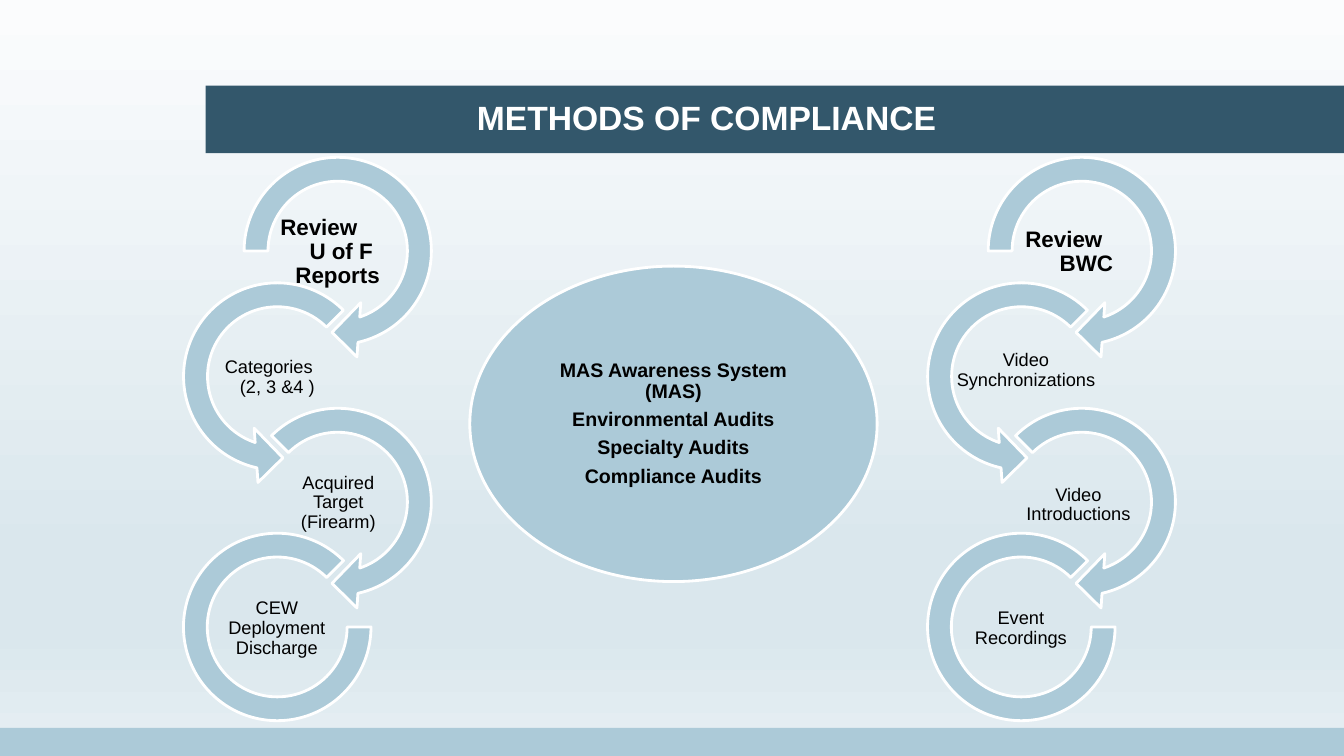
from dataclasses import dataclass

from lxml import etree
from pptx import Presentation
from pptx.dml.color import RGBColor
from pptx.enum import shapes, text
from pptx.oxml import ns
from pptx.util import Inches, Pt

MIST = "ACCAD8"
WHITE = "FFFFFF"
BLACK = "000000"
STEP = 1.245
ARROW_SIZE = 2.16
GEOMETRY = shapes.MSO_SHAPE


@dataclass
class Label:
    """Text of one step, with optional line indents and a nudged place."""
    lines: list
    indents: tuple = ()
    size: int = 13
    bold: bool = False
    dx: float = 0
    dy: float = 0
    width: float = 1.21


@dataclass
class Arc:
    """Outline of one step, placed relative to its column."""
    geometry: int
    dx: float
    top: float
    size: float
    label_dx: float
    adjustments: tuple


def turn_arrow(geometry, dx, row, label_dx, end, start):
    """Describe one curved arrow of the chain."""
    return Arc(geometry, dx, 1.41 + STEP * row, ARROW_SIZE, label_dx,
               (0.11, 11.423, end, start, 0.125))


ARCS = [
    turn_arrow(GEOMETRY.CIRCULAR_ARROW, 0.6, 0, 1.08, 45, 108),
    turn_arrow(GEOMETRY.LEFT_CIRCULAR_ARROW, 0, 1, 0.47, 63, 189),
    turn_arrow(GEOMETRY.CIRCULAR_ARROW, 0.6, 2, 1.08, 45, 135),
    Arc(GEOMETRY.BLOCK_ARC, 0.15, 5.29, 1.86, 0.47, (0, 189, 0.127)),
]
REPORT_STEPS = [
    Label(["Review", "U of F", "Reports"], (0.02, 0.31, 0.17), 16, True),
    Label(["Categories", "(2, 3 &4 )"], (0.08, 0.23)),
    Label(["Acquired Target (Firearm)"]),
    Label(["CEW Deployment Discharge"]),
]
VIDEO_STEPS = [
    Label(["Review", "BWC"], (0.03, 0.37), 16, True),
    Label(["Video Synchronizations"], dx=-0.17, dy=-0.07, width=1.65),
    Label(["Video Introductions"], dx=-0.04, dy=0.02),
    Label(["Event Recordings"]),
]
AUDITS = ["MAS Awareness System (MAS)", "Environmental Audits",
          "Specialty Audits", "Compliance Audits"]


def color(code):
    """Turn a hex string into a colour."""
    return RGBColor.from_string(code)


def paint_background(slide, stops):
    """Fill the slide with a top-to-bottom gradient."""
    fill = slide.background.fill
    fill.gradient()
    fill.gradient_angle = 270
    stop_list = next(slide.element.iter(ns.qn("a:gsLst")))
    for stop in list(stop_list):
        stop_list.remove(stop)
    for percent, code in stops:
        stop = etree.SubElement(stop_list, ns.qn("a:gs"), pos=str(percent * 1000))
        etree.SubElement(stop, ns.qn("a:srgbClr"), val=code)


def add_figure(parent, geometry, box, fill, outline=None, adjustments=()):
    """Add a flat preset shape."""
    figure = parent.add_shape(geometry, *map(Inches, box))
    figure.shadow.inherit = False
    figure.fill.solid()
    figure.fill.fore_color.rgb = color(fill)
    if outline:
        figure.line.color.rgb = color(outline)
        figure.line.width = Pt(2)
    else:
        figure.line.fill.background()
    for index, value in enumerate(adjustments):
        figure.adjustments[index] = value


def add_text(parent, box, lines, size, bold=False, code=BLACK, inset=0.01,
             align=text.PP_ALIGN.CENTER, gap=0, spacing=0.9, indents=()):
    """Add a wrapped, vertically centred text box."""
    frame = parent.add_textbox(*map(Inches, box)).text_frame
    frame.word_wrap = True
    frame.vertical_anchor = text.MSO_ANCHOR.MIDDLE
    frame.margin_left = frame.margin_right = Inches(inset)
    frame.margin_top = frame.margin_bottom = Inches(inset)
    frame.text = "\n".join(lines)
    for index, paragraph in enumerate(frame.paragraphs):
        paragraph.alignment = align
        paragraph.line_spacing = spacing
        paragraph.space_after = Pt(gap)
        if indents:
            paragraph.alignment = text.PP_ALIGN.LEFT
            properties = paragraph._p.get_or_add_pPr()
            properties.set("marL", str(Inches(indents[index])))
            properties.set("indent", "0")
        for run in paragraph.runs:
            run.font.name = "Arial"
            run.font.size = Pt(size)
            run.font.bold = bold
            run.font.color.rgb = color(code)


def add_chain(slide, left, labels):
    """Add a column of linked circular arrows with their labels."""
    chain = slide.shapes.add_group_shape().shapes
    for row, (arc, label) in enumerate(zip(ARCS, labels)):
        add_figure(chain, arc.geometry,
                   (left + arc.dx, arc.top, arc.size, arc.size),
                   MIST, WHITE, arc.adjustments)
        box = (left + arc.label_dx + label.dx, 2.2 + STEP * row + label.dy,
               label.width, 0.6)
        add_text(chain, box, label.lines, label.size, label.bold,
                 indents=label.indents)


def add_audits(slide):
    """Add the central ellipse with the list of audits."""
    hub = slide.shapes.add_group_shape().shapes
    add_figure(hub, GEOMETRY.OVAL, (4.66, 2.64, 4.04, 3.13), MIST, WHITE)
    add_text(hub, (5.25, 3.1, 2.86, 2.21), AUDITS, 14, True, inset=0.02, gap=5)


def main():
    """Build the slide and save it."""
    deck = Presentation()
    deck.slide_width, deck.slide_height = Inches(13.33), Inches(7.5)
    slide = deck.slides.add_slide(deck.slide_layouts[6])
    paint_background(slide, [(0, "FBFCFD"), (74, "DAE7ED"),
                             (83, "DAE7ED"), (100, "E6EFF3")])
    add_figure(slide.shapes, GEOMETRY.RECTANGLE, (2.04, 0.85, 11.29, 0.67), "33576B")
    add_figure(slide.shapes, GEOMETRY.RECTANGLE, (0, 7.22, 13.33, 0.28), MIST)
    add_text(slide.shapes, (4.73, 0.83, 4.99, 0.67), ["METHODS OF COMPLIANCE"],
             24, True, WHITE, inset=0, align=text.PP_ALIGN.LEFT, spacing=1.0)
    add_chain(slide, 1.67, REPORT_STEPS)
    add_chain(slide, 9.05, VIDEO_STEPS)
    add_audits(slide)
    deck.save("out.pptx")


if __name__ == "__main__":
    main()
